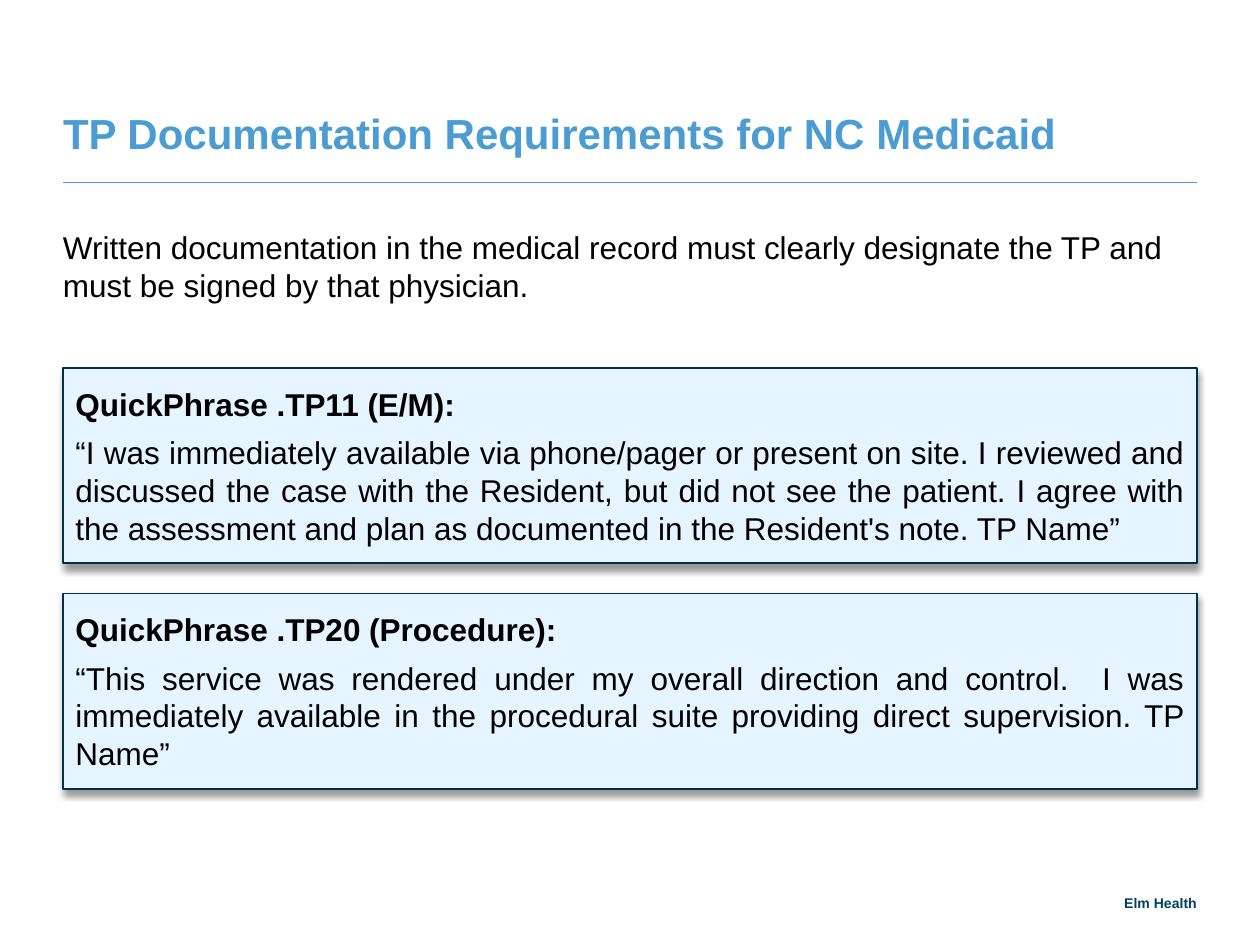
from lxml.etree import SubElement
from pptx import Presentation
from pptx.dml.color import RGBColor
from pptx.enum.shapes import MSO_CONNECTOR, MSO_SHAPE
from pptx.enum.text import MSO_ANCHOR, MSO_AUTO_SIZE, PP_ALIGN
from pptx.oxml.ns import qn
from pptx.util import Inches, Pt

SKY = RGBColor(0x4B, 0x9C, 0xD3)
NAVY = RGBColor(0x00, 0x41, 0x63)
BORDER = RGBColor(0x00, 0x30, 0x49)
PALE = RGBColor(0xE5, 0xF4, 0xFF)
BLACK = RGBColor(0x00, 0x00, 0x00)

LEFT, WIDTH = 0.5, 9
CARD_TOP, CARD_HEIGHT, CARD_GAP = 2.92, 1.55, 0.24

PHRASES = [
    ("QuickPhrase .TP11 (E/M):",
     "“I was immediately available via phone/pager or present on site. "
     "I reviewed and discussed the case with the Resident, but did not see "
     "the patient. I agree with the assessment and plan as documented in the "
     "Resident's note. TP Name”"),
    ("QuickPhrase .TP20 (Procedure):",
     "“This service was rendered under my overall direction and control.  "
     "I was immediately available in the procedural suite providing direct "
     "supervision. TP Name”"),
]


def set_attributes(target, values):
    for name, value in values.items():
        setattr(target, name, value)


def set_frame(frame, anchor, insets):
    """Set anchor and insets, given in inches as left, top, right, bottom."""
    left, top, right, bottom = map(Inches, insets)
    set_attributes(frame, {
        "word_wrap": True, "auto_size": MSO_AUTO_SIZE.NONE,
        "vertical_anchor": anchor, "margin_left": left, "margin_top": top,
        "margin_right": right, "margin_bottom": bottom})


def write(paragraph, text, size, color=BLACK, bold=False, **layout):
    set_attributes(paragraph, {"alignment": PP_ALIGN.LEFT, **layout})
    run = paragraph.add_run()
    run.text = text
    set_attributes(run.font, {"name": "Arial", "size": Pt(size), "bold": bold})
    run.font.color.rgb = color


def add_drop_shadow(shape):
    effects = SubElement(shape._element.spPr, qn("a:effectLst"))
    shadow = SubElement(effects, qn("a:outerShdw"), {
        "blurRad": str(Pt(4)), "dist": str(Pt(3)), "dir": "5400000",
        "algn": "t", "rotWithShape": "0"})
    color = SubElement(shadow, qn("a:srgbClr"), val=str(BLACK))
    SubElement(color, qn("a:alpha"), val="40000")


def place_title(slide, left, top, width, height):
    title = slide.shapes.title
    set_attributes(title, {"left": Inches(left), "top": Inches(top),
                           "width": Inches(width), "height": Inches(height)})
    set_frame(title.text_frame, MSO_ANCHOR.BOTTOM, (0, 0.95, 1.5, 0))
    write(title.text_frame.paragraphs[0],
          "TP Documentation Requirements for NC Medicaid",
          24, SKY, True, line_spacing=Pt(28))


def add_rule(slide, left, top, width):
    rule = slide.shapes.add_connector(
        MSO_CONNECTOR.STRAIGHT, Inches(left), Inches(top),
        Inches(left + width), Inches(top))
    rule.line.color.rgb = SKY
    rule.line.width = Pt(0.5)
    SubElement(rule._element.spPr, qn("a:effectLst"))


def add_intro(slide, left, top, width, height):
    intro = slide.shapes.add_textbox(*map(Inches, (left, top, width, height)))
    set_frame(intro.text_frame, MSO_ANCHOR.TOP, (0, 0.08, 0, 0))
    write(intro.text_frame.paragraphs[0],
          "Written documentation in the medical record must clearly designate "
          "the TP and must be signed by that physician.",
          18, space_after=Pt(9))


def add_phrase_card(slide, heading, statement, left, top, width, height):
    card = slide.shapes.add_shape(
        MSO_SHAPE.RECTANGLE, *map(Inches, (left, top, width, height)))
    card.fill.solid()
    card.fill.fore_color.rgb = PALE
    card.line.color.rgb = BORDER
    card.line.width = Pt(1)
    add_drop_shadow(card)
    frame = card.text_frame
    set_frame(frame, MSO_ANCHOR.MIDDLE, (0.1, 0.05, 0.1, 0.05))
    write(frame.paragraphs[0], heading, 18, bold=True, space_after=Pt(6))
    write(frame.add_paragraph(), statement, 18,
          alignment=PP_ALIGN.JUSTIFY, space_after=Pt(6))


def add_footer(slide, left, top, width, height):
    footer = slide.shapes.add_textbox(*map(Inches, (left, top, width, height)))
    set_frame(footer.text_frame, MSO_ANCHOR.BOTTOM, (0, 0, 0, 0))
    write(footer.text_frame.paragraphs[0], "Elm Health", 8, NAVY, True,
          alignment=PP_ALIGN.RIGHT)


def main():
    deck = Presentation()
    deck.slide_width, deck.slide_height = Inches(10), Inches(7.5)
    slide = deck.slides.add_slide(deck.slide_layouts.get_by_name("Title Only"))
    add_footer(slide, 8.27, 7, 1.23, 0.23)
    add_rule(slide, LEFT, 1.45, WIDTH)
    add_intro(slide, LEFT, 1.73, WIDTH, 5.11)
    place_title(slide, LEFT, 0.38, 10.09, 0.79)
    for row, (heading, statement) in enumerate(PHRASES):
        top = CARD_TOP + row * (CARD_HEIGHT + CARD_GAP)
        add_phrase_card(slide, heading, statement, LEFT, top, WIDTH, CARD_HEIGHT)
    deck.save("out.pptx")


if __name__ == "__main__":
    main()
